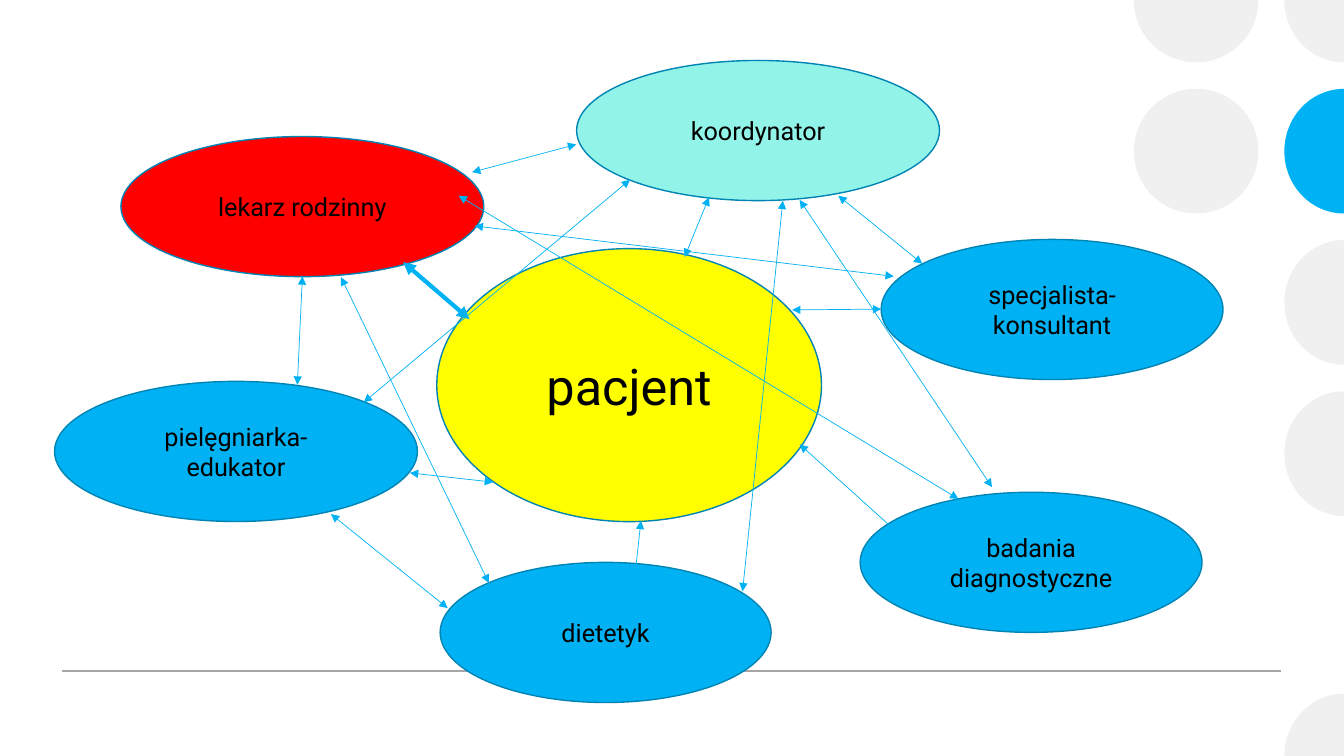
import itertools
import math

import pptx
import pptx.dml.color
import pptx.enum.shapes
import pptx.enum.text
import pptx.oxml
import pptx.oxml.ns
import pptx.util

COLORS = {
    "blue": "00B2F3",
    "outline": "0084B4",
    "yellow": "FFFF00",
    "mint": "92F3E9",
    "red": "FF0000",
    "disc": "EFF0EF",
    "rule": "A6A6A6",
    "text": "000000",
}
FONT = "Roboto"
WIDTH, HEIGHT = pptx.util.Inches(13.33), pptx.util.Inches(7.5)
COLUMNS, ROWS = 160, 90

ROLE_ROWS = 16.68
# label, left column, top row, columns wide, fill
ROLES = [
    ("badania diagnostyczne", 102.4, 58.6, 40.7, "blue"),
    ("specjalista- konsultant", 104.9, 28.5, 40.7, "blue"),
    ("koordynator", 68.65, 7.2, 43.2, "mint"),
    ("dietetyk", 52.4, 66.95, 39.4, "blue"),
    ("pielęgniarka-edukator", 6.5, 45.4, 43.2, "blue"),
    ("lekarz rodzinny", 14.4, 16.25, 43.2, "red"),
]
# start column and row, end column and row
CONTACTS = [
    ((99.8, 23.3), (109.8, 31.4)),   # koordynator, specjalista
    ((56.5, 26.9), (106.4, 32.9)),   # lekarz, specjalista
    ((56.2, 20.5), (68.6, 17.2)),    # lekarz, koordynator
    ((36, 32.9), (35.4, 45.8)),      # lekarz, pielęgniarka
    ((75, 21.4), (43.3, 47.9)),      # koordynator, pielęgniarka
    ((54.6, 23.3), (114.1, 59.4)),   # lekarz, badania
    ((76.3, 62), (75.4, 70.3)),      # pacjent, dietetyk
    ((95.2, 52.9), (108.4, 64.8)),   # pacjent, badania
    ((94.3, 36.9), (104.9, 36.8)),   # pacjent, specjalista
    ((84.4, 23.5), (81.5, 30.6)),    # koordynator, pacjent
    ((40.6, 33), (58.2, 69.4)),      # lekarz, dietetyk
    ((48.8, 56.3), (58.7, 57.4)),    # pielęgniarka, pacjent
    ((39.4, 61.2), (53.3, 72.4)),    # pielęgniarka, dietetyk
    ((93.2, 23.9), (88.4, 70.4)),    # koordynator, dietetyk
    ((95.2, 23.8), (118.1, 58)),     # koordynator, badania
]
DOCTOR_TO_PATIENT = ((48, 31.2), (55.9, 38))

DISC_RADIUS = 7.42
DISC_COLUMN = 142.4
EDGE_RADIUS = 7.1
DISC_PITCH = 18
# disc row, start angle, quarter turns, fill
EDGE_DISCS = [(5, 270, 1, "disc"), (3, 270, 2, "disc"), (2, 270, 2, "disc"),
              (1, 270, 2, "blue"), (0, 180, 1, "disc")]


def across(columns):
    return round(WIDTH * columns / COLUMNS)


def down(rows):
    return round(HEIGHT * rows / ROWS)


def rgb(name):
    return pptx.dml.color.RGBColor.from_string(COLORS[name])


def new_tag(tag, attributes=""):
    return pptx.oxml.parse_xml(f'<{tag} {pptx.oxml.ns.nsdecls("a")} {attributes}/>')


def paint(shape, fill, outline=None):
    shape.shadow.inherit = False
    shape.fill.solid()
    shape.fill.fore_color.rgb = rgb(fill)
    if outline:
        shape.line.color.rgb = rgb(outline)
        shape.line.width = pptx.util.Pt(1)
    else:
        shape.line.fill.background()


def write(shape, text, size=18, color="text", align=pptx.enum.text.PP_ALIGN.CENTER):
    frame = shape.text_frame
    frame.word_wrap = True
    frame.vertical_anchor = pptx.enum.text.MSO_ANCHOR.MIDDLE
    paragraph = frame.paragraphs[0]
    paragraph.alignment = align
    run = paragraph.add_run()
    run.text = text
    run.font.name = FONT
    run.font.size = pptx.util.Pt(size)
    run.font.color.rgb = rgb(color)


def add_oval(slide, left, top, columns, rows, fill, outline=None):
    oval = slide.shapes.add_shape(
        pptx.enum.shapes.MSO_SHAPE.OVAL,
        across(left), down(top), across(columns), down(rows))
    paint(oval, fill, outline)
    return oval


def add_sector(slide, x, y, radius, start, quarters, fill):
    """Draw the part of a disc that runs counterclockwise from the start angle."""
    angles = [start - 90 * turn for turn in range(quarters + 1)]
    rim = [(across(x + radius * math.cos(math.radians(angle))),
            down(y + DISC_RADIUS * math.sin(math.radians(angle)))) for angle in angles]
    builder = slide.shapes.build_freeform(*rim[0])
    builder.add_line_segments(rim[1:] + [(across(x), down(y))], close=True)
    sector = builder.convert_to_shape()
    sides = list(sector._element.iter(pptx.oxml.ns.qn("a:lnTo")))
    for side, angle in itertools.islice(zip(sides, angles), quarters):
        side.getparent().replace(side, new_tag(
            "a:arcTo", f'wR="{across(radius)}" hR="{down(DISC_RADIUS)}" '
                       f'stAng="{angle * 60000}" swAng="-5400000"'))
    paint(sector, fill)


def add_line(slide, start, end, color="blue", width=0.5, arrows=True):
    line = slide.shapes.add_connector(
        pptx.enum.shapes.MSO_CONNECTOR.STRAIGHT,
        across(start[0]), down(start[1]), across(end[0]), down(end[1]))
    line.line.color.rgb = rgb(color)
    line.line.width = pptx.util.Pt(width)
    properties = line._element.spPr
    if arrows:
        outline = properties.find(pptx.oxml.ns.qn("a:ln"))
        for tag in ("a:headEnd", "a:tailEnd"):
            outline.append(new_tag(tag, 'type="triangle"'))
    properties.append(new_tag("a:effectLst"))


def main():
    deck = pptx.Presentation()
    deck.slide_width, deck.slide_height = WIDTH, HEIGHT
    slide = deck.slides.add_slide(deck.slide_layouts[6])

    add_oval(slide, DISC_COLUMN - DISC_RADIUS, DISC_PITCH - DISC_RADIUS,
             2 * DISC_RADIUS, 2 * DISC_RADIUS, "disc")
    add_sector(slide, DISC_COLUMN, 0, DISC_RADIUS, 180, 2, "disc")
    for row, start, quarters, fill in EDGE_DISCS:
        add_sector(slide, COLUMNS, row * DISC_PITCH, EDGE_RADIUS, start, quarters, fill)
    add_line(slide, (7.4, 79.9), (152.5, 79.9), color="rule", width=1, arrows=False)

    patient = add_oval(slide, 52, 29.6, 45.8, 32.5, "yellow", "outline")
    write(patient, "pacjent", size=36)
    for label, left, top, columns, fill in ROLES:
        role = add_oval(slide, left, top, columns, ROLE_ROWS, fill, "outline")
        write(role, label)

    for start, end in CONTACTS:
        add_line(slide, start, end)
    add_line(slide, *DOCTOR_TO_PATIENT, width=3)

    deck.save("out.pptx")


if __name__ == "__main__":
    main()
